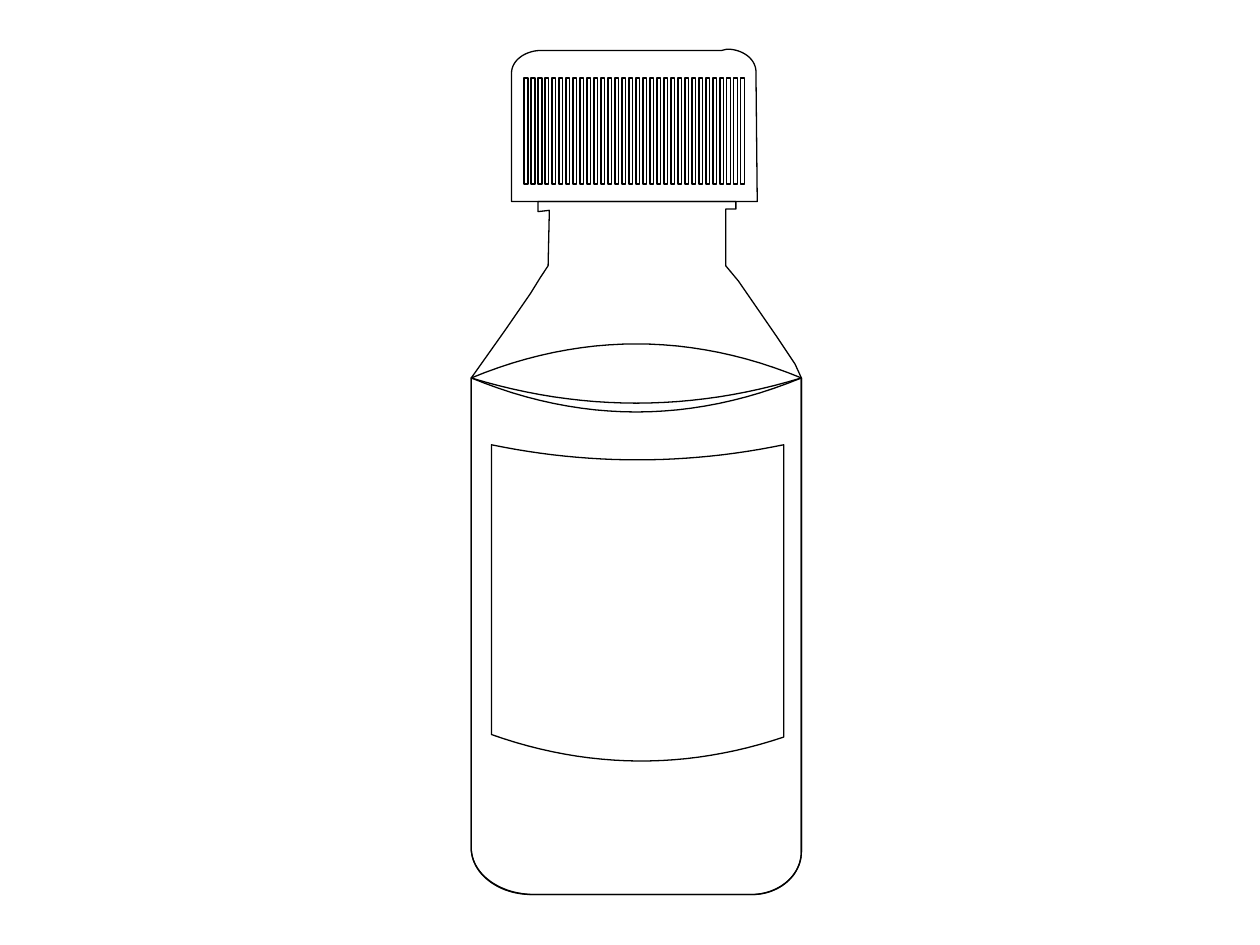
from math import cos, pi, sin

from pptx import Presentation
from pptx.dml.color import RGBColor
from pptx.util import Inches, Pt

COLORS = {"outline": "000000"}
LEFT, RIGHT, SHOULDER, BASE = 3.74, 6.36, 3, 7.1
RIDGES, RIDGE_W, RIDGE_TOP, RIDGE_BOTTOM = 32, 0.03, 0.62, 1.46
FIRST_RIDGE, LAST_RIDGE = 4.16, 5.88

prs = Presentation()
prs.slide_width, prs.slide_height = Inches(10), Inches(7.5)
s = prs.slides.add_slide(prs.slide_layouts[6])


def curve(x1, y1, x2, y2, sag=0, corner=None, steps=24):
    """Points of a parabola with the given sag, or of a quarter ellipse.

    For a quarter ellipse, corner is the box corner that is rounded off.
    """
    points = []
    for i in range(steps + 1):
        t = i / steps
        if corner:
            u, v = 1 - sin(t * pi / 2), 1 - cos(t * pi / 2)
            cx, cy = corner
            points.append((cx + (x1 - cx) * u + (x2 - cx) * v,
                           cy + (y1 - cy) * u + (y2 - cy) * v))
        else:
            points.append((x1 + (x2 - x1) * t,
                           y1 + (y2 - y1) * t + 4 * sag * t * (1 - t)))
    return points


def add_outline(*contours):
    contours = [[(Inches(x), Inches(y)) for x, y in c] for c in contours]
    builder = s.shapes.build_freeform(*contours[0][0])
    for i, points in enumerate(contours):
        if i:
            builder.move_to(*points[0])
        builder.add_line_segments(points[1:], close=True)
    sp = builder.convert_to_shape()
    sp.shadow.inherit = False
    sp.fill.background()
    sp.line.color.rgb = RGBColor.from_string(COLORS["outline"])
    sp.line.width = Pt(0)


# Glass bottle
add_outline(
    [(4.27, 1.6), (5.84, 1.6), (5.84, 1.66), (5.76, 1.66), (5.76, 2.11),
     (5.86, 2.23), (6.17, 2.68), (6.31, 2.89), (RIGHT, SHOULDER)]
    + curve(RIGHT, 6.76, 5.96, BASE, corner=(RIGHT, BASE))
    + curve(4.24, BASE, LEFT, 6.73, corner=(LEFT, BASE))
    + [(LEFT, SHOULDER), (4.01, 2.62), (4.21, 2.33), (4.29, 2.2),
       (4.35, 2.11), (4.36, 1.67), (4.27, 1.68)])

# Liquid
add_outline(
    curve(LEFT, SHOULDER, RIGHT, SHOULDER, sag=0.2)
    + curve(RIGHT, 6.76, 5.97, BASE, corner=(RIGHT, BASE))
    + curve(4.22, BASE, LEFT, 6.73, corner=(LEFT, BASE)))

# Liquid surface
add_outline(
    curve(LEFT, SHOULDER, RIGHT, SHOULDER, sag=-0.27)
    + curve(RIGHT, SHOULDER, LEFT, SHOULDER, sag=0.27))

# Cap with its ridges
cap = ([(4.06, 1.6)]
       + curve(4.06, 0.58, 4.3, 0.4, corner=(4.06, 0.4))
       + [(5.73, 0.4)]
       + curve(5.77, 0.39, 6, 0.57, corner=(6, 0.39))
       + [(6.01, 1.6)])
pitch = (LAST_RIDGE - FIRST_RIDGE) / (RIDGES - 1)
ridges = []
for i in range(RIDGES):
    x = FIRST_RIDGE + i * pitch
    ridges.append([(x, RIDGE_TOP), (x + RIDGE_W, RIDGE_TOP),
                   (x + RIDGE_W, RIDGE_BOTTOM), (x, RIDGE_BOTTOM)])
add_outline(cap, *ridges)

# Blank label
add_outline(
    curve(3.9, 3.53, 6.22, 3.53, sag=0.12)
    + curve(6.22, 5.85, 3.9, 5.83, sag=0.2))

prs.save("out.pptx")
